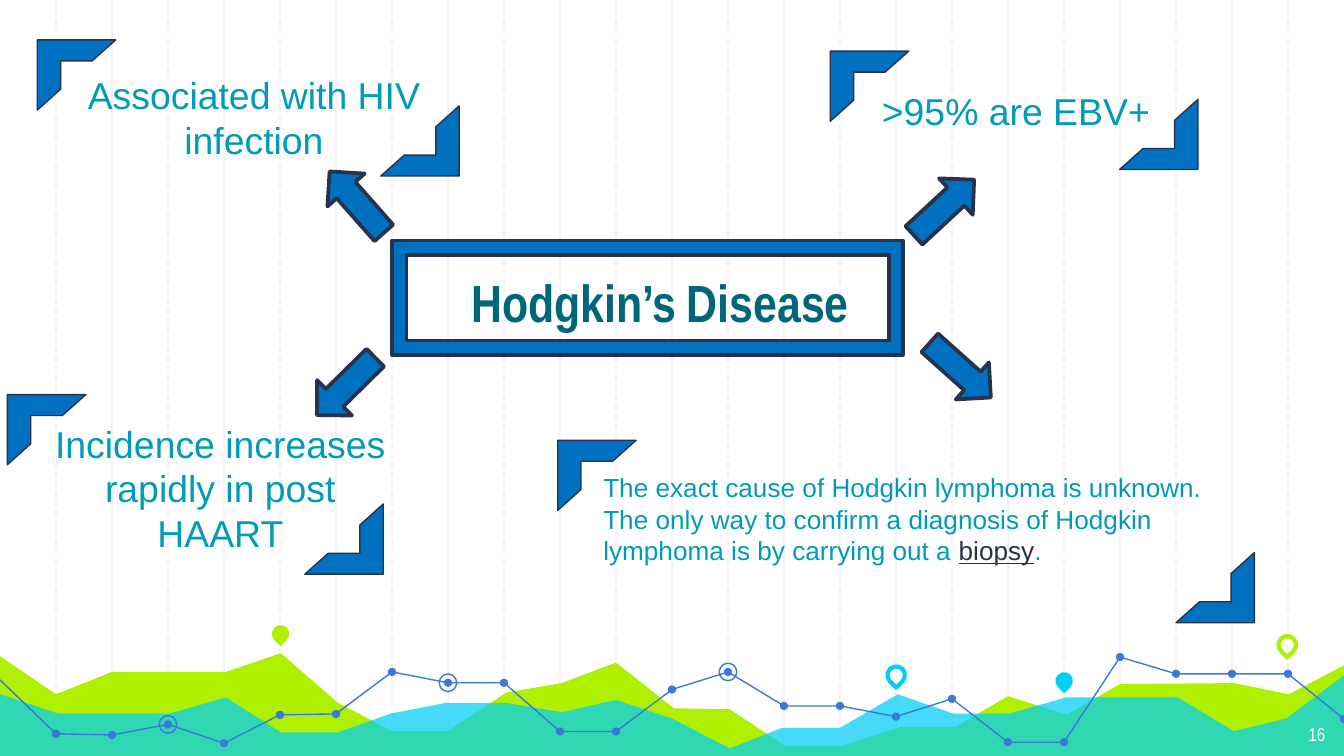
import pptx
import pptx.dml.color
import pptx.enum.dml
import pptx.enum.shapes
import pptx.enum.text
import pptx.oxml
import pptx.oxml.ns
import pptx.util

Pt = pptx.util.Pt
SHAPE = pptx.enum.shapes.MSO_SHAPE
ALIGN = pptx.enum.text.PP_ALIGN
ANCHOR = pptx.enum.text.MSO_ANCHOR
NONE_SIZE = pptx.enum.text.MSO_AUTO_SIZE.NONE

BLUE, NAVY, TEAL, TITLE_TEAL = "0070C0", "28324A", "009BB8", "00677B"
LIME, CYAN, TREND_BLUE, GRID_GREY, WHITE = "AFF000", "00CEF6", "3C78D8", "F3F3F3", "FFFFFF"
STEP = 30  # distance between grid lines

GREEN_AREA = [
    (-1.4, 350.6), (30, 372), (60, 360), (121, 360), (150.5, 350), (181, 376.5),
    (210, 391.7), (240, 391.7), (271.5, 371), (301, 366), (330, 355), (361, 379.5),
    (391, 380), (420.5, 399.6), (451, 399.6), (482.5, 389.5), (512, 389.5), (540, 373),
    (571.5, 383), (600, 366.5), (661, 366), (690.5, 372), (721.5, 355.7), (721, 406), (-2, 406),
]
CYAN_AREA = [
    (-1.4, 371.5), (31, 382.3), (91, 382.3), (121, 373.7), (150.5, 392.4), (181, 392.4),
    (209.5, 382.3), (239, 376.6), (271, 376.6), (301, 381.6), (330, 375), (360, 385),
    (391, 401), (419, 390), (450, 390), (481, 372), (510.5, 382.3), (541, 382.3),
    (571, 373.7), (631, 373.7), (661, 391.7), (689, 385), (721.5, 360.7), (721.5, 406.8), (-2, 406.8),
]
# Height of the trend line at each grid line, from the left edge
TREND = [
    364.3, 393.1, 393.8, 388.1, 398.2, 383, 382.5, 360, 365.8, 365.8, 391.9, 391.9, 369.4,
    360, 378.2, 378.2, 383.9, 374.4, 397.6, 397.6, 352, 361, 361, 361, 385.2,
]
RINGED = (3, 8, 13)
PINS = [  # left, top, fill, outline
    (145.6, 334.9, LIME, None), (475.4, 357, None, CYAN),
    (565.4, 360.1, CYAN, None), (684.9, 340.7, None, LIME),
]
ARROWS = [(169.2, 95, 228.6), (492.5, 185, 41.8), (163.4, 193.7, 135.4), (483.8, 97.9, 317.2)]
BRACKETS = [  # opening corner, closing corner
    ((20, 21.4), (204, 56.7)), ((4, 211.4), (163.3, 270)),
    ((444.8, 27.4), (599.8, 53.2)), ((298.8, 235.9), (630, 296)),
]


def colour(hex_string):
    return pptx.dml.color.RGBColor.from_string(hex_string)


def paint(shape, fill=None, line=None, width=0.75):
    """Give a shape its fill and outline; None leaves either out."""
    shape.shadow.inherit = False
    if fill:
        shape.fill.solid()
        shape.fill.fore_color.rgb = colour(fill)
    else:
        shape.fill.background()
    if line:
        shape.line.color.rgb = colour(line)
        shape.line.width = Pt(width)
    else:
        shape.line.fill.background()


def add_preset(page, kind, box, rotation=0, adjustments=(), **style):
    shape = page.shapes.add_shape(kind, *map(Pt, box))
    shape.rotation = rotation
    for index, value in enumerate(adjustments):
        shape.adjustments[index] = value
    paint(shape, **style)
    return shape


def add_outline(page, points, closed, **style):
    points = [(Pt(x), Pt(y)) for x, y in points]
    builder = page.shapes.build_freeform(*points[0])
    builder.add_line_segments(points[1:], close=closed)
    shape = builder.convert_to_shape()
    paint(shape, **style)
    return shape


def add_grid_line(page, x, dashed):
    line = page.shapes.add_connector(
        pptx.enum.shapes.MSO_CONNECTOR.STRAIGHT, Pt(x), 0, Pt(x), Pt(406.8))
    line.line.color.rgb = colour(GRID_GREY)
    line.line.width = Pt(0.75)
    if dashed:
        line.line.dash_style = pptx.enum.dml.MSO_LINE.DASH
    properties = line.element.find(pptx.oxml.ns.qn("p:spPr"))
    pptx.oxml.ns.qn("a:effectLst")
    properties.append(pptx.oxml.parse_xml(
        f"<a:effectLst {pptx.oxml.ns.nsdecls('a')}/>"))


def write(box, paragraphs, align, frame_format, **base):
    """Fill a box with paragraphs, each a list of (text, changed font values)."""
    frame = box.text_frame
    for name, value in {"word_wrap": True, "auto_size": NONE_SIZE, **frame_format}.items():
        setattr(frame, name, value)
    for index, runs in enumerate(paragraphs):
        para = frame.add_paragraph() if index else frame.paragraphs[0]
        para.alignment = align
        for text, changes in runs:
            span = para.add_run()
            span.text = text
            values = {**base, **changes}
            span.font.color.rgb = colour(values.pop("color"))
            for name, value in values.items():
                setattr(span.font, name, value)


def add_text(page, box, paragraphs, align, size, color=TEAL, font="Arial", frame_format=None):
    text_box = page.shapes.add_textbox(*map(Pt, box))
    write(text_box, paragraphs, align, frame_format or {}, size=Pt(size), name=font, color=color)


def add_grid(page):
    for dashed in (False, True):
        for column in range(1 if dashed else 2, 24, 2):
            add_grid_line(page, column * STEP, dashed)


def add_landscape(page):
    # Filled areas, the front one see-through
    add_outline(page, GREEN_AREA, True, fill=LIME)
    front = add_outline(page, CYAN_AREA, True, fill=CYAN)
    shade = front.element.find(".//" + pptx.oxml.ns.qn("a:srgbClr"))
    shade.append(pptx.oxml.parse_xml(
        f"<a:alpha {pptx.oxml.ns.nsdecls('a')} val='73000'/>"))

    # Map pins
    for left, top, fill, line in PINS:
        add_preset(page, SHAPE.TEAR, (left, top, 9.4, 9.4), 135, (1,),
                   fill=fill, line=line, width=2.25)

    # Trend line in three stretches, with dots and rings
    points = [(column * STEP, y) for column, y in enumerate(TREND)]
    for first, last in ((0, 11), (11, 20), (20, 24)):
        add_outline(page, points[first:last + 1], False, line=TREND_BLUE)
    for x, y in points[1:]:
        add_preset(page, SHAPE.OVAL, (x - 2.2, y - 2.2, 4.4, 4.4), fill=TREND_BLUE)
    for column in RINGED:
        x, y = points[column]
        add_preset(page, SHAPE.OVAL, (x - 4.7, y - 4.7, 9.4, 9.4), line=TREND_BLUE)


def add_title(page):
    title = page.shapes.title
    title.element.getparent().append(title.element)  # in front of the backdrop
    box = {"left": 211, "top": 129.6, "width": 285.1, "height": 56.2}
    for name, value in box.items():
        setattr(title, name, Pt(value))
    margins = {f"margin_{side}": Pt(7.2) for side in ("left", "right", "top", "bottom")}
    runs = [("Hodgkin’s", {}), (" ", {"size": Pt(24)}), ("Disease", {})]
    write(title, [runs], ALIGN.CENTER, {"vertical_anchor": ANCHOR.BOTTOM, **margins},
          size=Pt(28), name="Arial Narrow", bold=True, color=TITLE_TEAL)


def main():
    deck = pptx.Presentation()
    deck.slide_width, deck.slide_height = Pt(720), Pt(405)
    page = deck.slides.add_slide(deck.slide_layouts[5])

    # Backdrop
    add_grid(page)
    add_landscape(page)

    # Title in its frame, and page number
    add_title(page)
    add_text(page, (673.9, 380.2, 43.2, 25.2), [[("16", {})]], ALIGN.RIGHT, 10, WHITE,
             "Arial Narrow", {"margin_top": Pt(7.2), "margin_bottom": Pt(7.2)})
    add_preset(page, SHAPE.FRAME, (210.2, 128.9, 273.6, 61.2), fill=BLUE, line=NAVY, width=2)

    # Arrows and corner brackets
    for left, top, rotation in ARROWS:
        add_preset(page, SHAPE.RIGHT_ARROW, (left, top, 43.9, 26.6), rotation,
                   fill=BLUE, line=NAVY, width=2)
    for corners in BRACKETS:
        for corner, rotation in zip(corners, (0, 180)):
            add_preset(page, SHAPE.HALF_FRAME, (*corner, 42, 37.6), rotation,
                       (0.299, 0.333), fill=BLUE, line=NAVY)

    # Facts around the title
    facts = [
        ("Associated with HIV infection", (34.6, 35.3, 203, 55.4)),
        ("Incidence increases rapidly in post HAART", (13.7, 221.8, 208.8, 79.9)),
        (">95% are EBV+", (458.6, 43.9, 171.4, 31.7)),
    ]
    for text, box in facts:
        add_text(page, box, [[(text, {})]], ALIGN.CENTER, 20)
    diagnosis = [
        [("The exact cause of Hodgkin lymphoma is unknown.", {})],
        [("The only way to confirm a diagnosis of Hodgkin lymphoma is by carrying out a ", {}),
         ("biopsy", {"color": NAVY, "underline": True}), (".", {})],
    ]
    add_text(page, (316.1, 249.1, 344.9, 58.3), diagnosis, ALIGN.LEFT, 14)

    deck.save("out.pptx")


if __name__ == "__main__":
    main()
